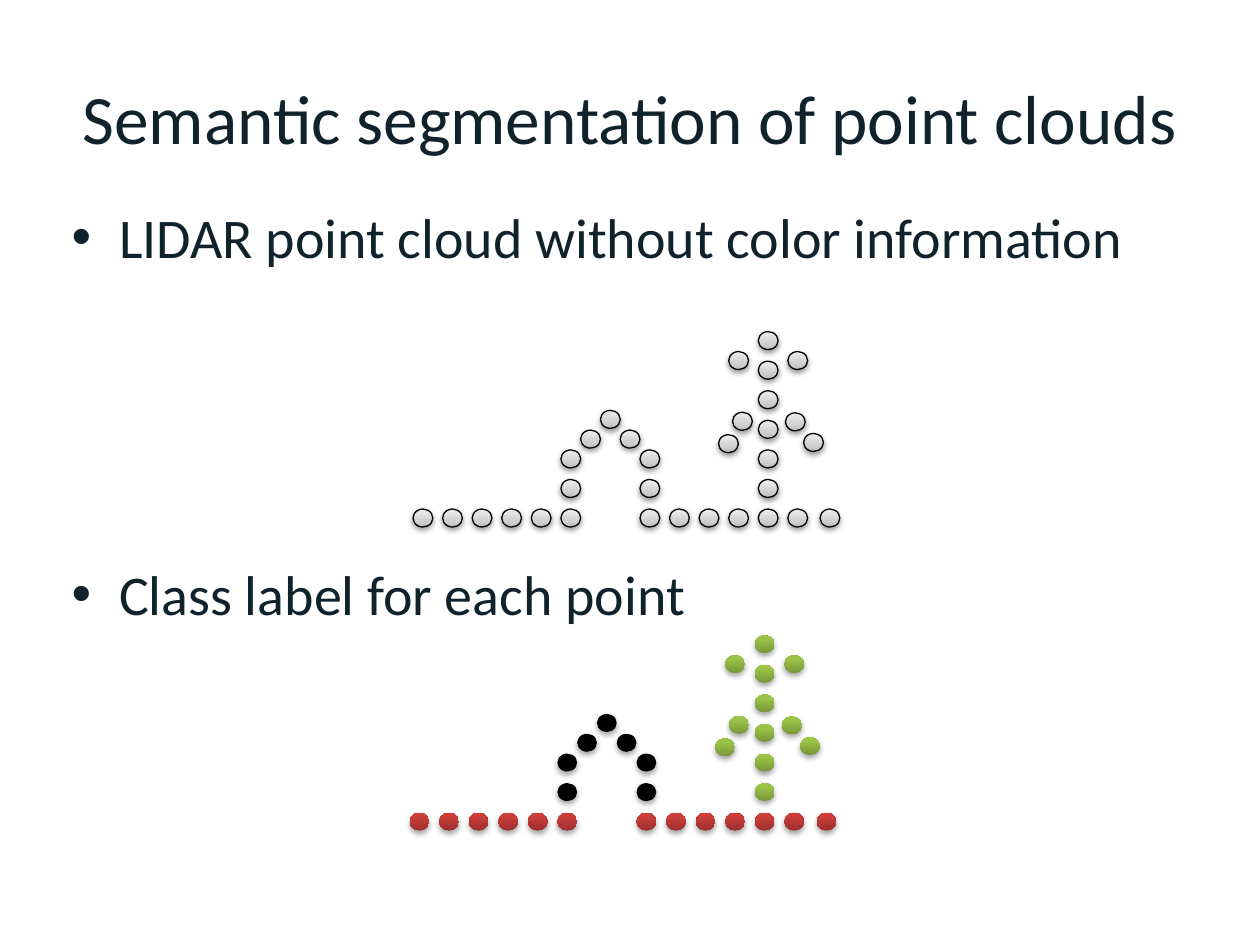
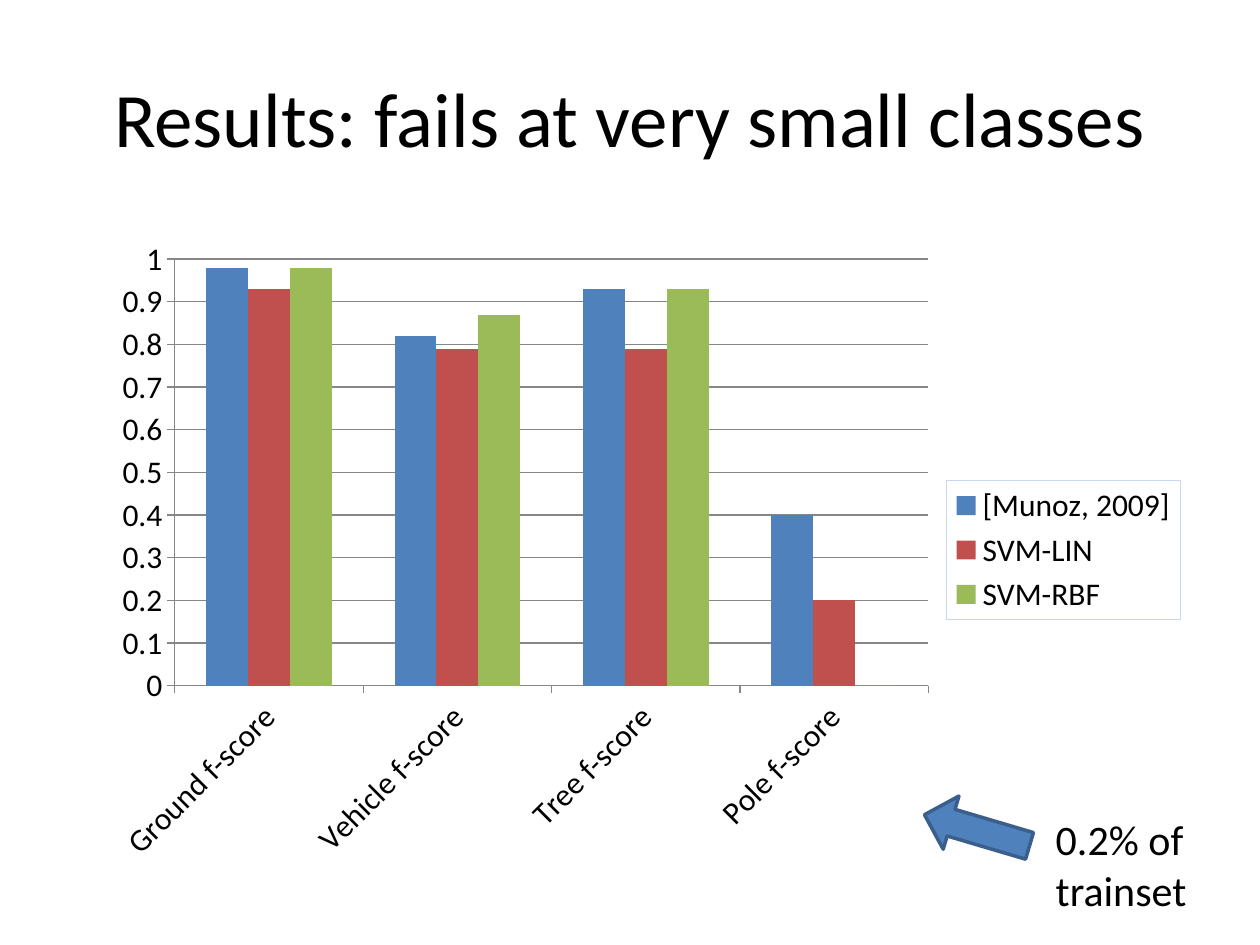
import pptx
import pptx.chart.data
import pptx.dml.color
import pptx.enum.chart
import pptx.enum.shapes
import pptx.enum.text
import pptx.oxml
import pptx.oxml.ns
import pptx.util
from pptx.util import Pt

FONT = "Calibri"
COLORS = {
    "ink": "10222B", "black": "000000", "axis": "878787", "legend_line": "C6D9F1",
    "blue": "4F81BD", "red": "C0504D", "green": "9BBB59", "arrow_line": "3A5F8C",
}
# Gradient stops (percent, colour) run from the bottom of a point to its top.
GRADIENTS = {
    "unlabelled": [(0, "BDBDBD"), (35, "D1D1D1"), (100, "EEEEEE")],
    "ground": [(0, "9C2F2D"), (80, "CB3E3A"), (100, "CE3B37")],
    "tree": [(0, "779737"), (80, "9BC348"), (100, "9DC746")],
}
POINT_WIDTH, POINT_HEIGHT = 11.3, 10.3
STEP = 16.9
ROOF_STEP = 11.3
RIGHT_WALL = 5 * STEP + 4 * ROOF_STEP
TRUNK = RIGHT_WALL + 4 * STEP

SCORES = {
    "[Munoz, 2009]": ("blue", (0.98, 0.82, 0.93, 0.4)),
    "SVM-LIN": ("red", (0.93, 0.79, 0.79, 0.2)),
    "SVM-RBF": ("green", (0.98, 0.87, 0.93, 0)),
}
CLASSES = ["Ground f-score", "Vehicle f-score", "Tree f-score", "Pole f-score"]


def rgb(name):
    return pptx.dml.color.RGBColor.from_string(COLORS[name])


def xml(tag, attributes="", content=""):
    """Build an element whose tag has the prefix a or c."""
    return pptx.oxml.parse_xml(
        f"<{tag} {pptx.oxml.ns.nsdecls('a', 'c')} {attributes}>{content}</{tag}>")


def color_xml(value, content=""):
    return f'<a:srgbClr val="{value}">{content}</a:srgbClr>'


def place(shape, left, top, width, height):
    shape.left, shape.top = Pt(left), Pt(top)
    shape.width, shape.height = Pt(width), Pt(height)


def add_span(para, text, size, color):
    span = para.add_run()
    span.text = text
    span.font.name, span.font.size = FONT, Pt(size)
    span.font.color.rgb = rgb(color)


def add_page(deck, layout, title, size, color):
    page = deck.slides.add_slide(deck.slide_layouts[layout])
    place(page.shapes.title, 36, 21.6, 648, 90)
    add_span(page.shapes.title.text_frame.paragraphs[0], title, size, color)
    return page


def fill_list(page, items, gap):
    """Write the bullets, with the given space before each one but the first."""
    body = page.placeholders[1]
    place(body, 33.8, 112.3, 648, 356.4)
    frame = body.text_frame
    frame.auto_size = pptx.enum.text.MSO_AUTO_SIZE.NONE
    for index, item in enumerate(items):
        para = frame.add_paragraph() if index else frame.paragraphs[0]
        if index:
            para.space_before = Pt(gap)
        add_span(para, item, 32, "ink")


def scene_points():
    """Return (x, height, class) of each point, from the leftmost ground point."""
    ground = [(i * STEP, 0) for i in range(6)]
    ground += [(RIGHT_WALL + i * STEP, 0) for i in range(6)]
    ground.append((232.6, 0))

    house = [(x, i * STEP) for x in (5 * STEP, RIGHT_WALL) for i in (1, 2)]
    house += [(5 * STEP + i * ROOF_STEP, 2 * STEP + (2 - abs(i - 2)) * ROOF_STEP)
              for i in (1, 2, 3)]

    tree = [(TRUNK, i * STEP) for i in range(1, 7)]
    branches = [(-STEP, 90), (STEP, 90), (-14.7, 55.3), (15.5, 55),
                (-22.7, 42.5), (25.9, 43.2)]
    tree += [(TRUNK + dx, height) for dx, height in branches]

    classes = {"ground": ground, "house": house, "tree": tree}
    return [(x, height, name) for name, spots in classes.items() for x, height in spots]


def set_gradient(shape, stops):
    shape.fill.gradient()
    shape.fill.gradient_angle = 90
    stop_list = shape.fill._xPr.find(".//" + pptx.oxml.ns.qn("a:gsLst"))
    for stop in list(stop_list):
        stop_list.remove(stop)
    for percent, value in stops:
        stop_list.append(xml("a:gs", f'pos="{percent * 1000}"', color_xml(value)))


def set_shadow(shape, distance, opacity):
    shape.shadow.inherit = False
    effects = shape._element.spPr.find(pptx.oxml.ns.qn("a:effectLst"))
    effects.append(xml(
        "a:outerShdw",
        f'blurRad="{Pt(3.1)}" dist="{Pt(distance)}" dir="5400000" rotWithShape="0"',
        color_xml(COLORS["black"], f'<a:alpha val="{opacity * 1000}"/>')))


def add_cloud(page, left, ground_top, labelled):
    cloud = page.shapes.add_group_shape()
    for x, height, name in scene_points():
        point = cloud.shapes.add_shape(
            pptx.enum.shapes.MSO_SHAPE.OVAL, Pt(left + x), Pt(ground_top - height),
            Pt(POINT_WIDTH), Pt(POINT_HEIGHT))
        if not labelled:
            set_gradient(point, GRADIENTS["unlabelled"])
        elif name in GRADIENTS:
            set_gradient(point, GRADIENTS[name])
        else:
            point.fill.solid()
            point.fill.fore_color.rgb = rgb("black")
        if labelled:
            point.line.fill.background()
            set_shadow(point, 1.8, 35)
        else:
            point.line.color.rgb = rgb("black")
            point.line.width = Pt(0.75)
            set_shadow(point, 1.6, 38)


def style_axis(axis):
    axis.major_tick_mark = pptx.enum.chart.XL_TICK_MARK.OUTSIDE
    axis.format.line.color.rgb = rgb("axis")
    axis.format.line.width = Pt(0.75)


def add_legend(chart):
    chart.has_legend = True
    chart.legend.position = pptx.enum.chart.XL_LEGEND_POSITION.RIGHT
    chart.legend.include_in_layout = False
    overlay = chart.legend._element.find(pptx.oxml.ns.qn("c:overlay"))
    overlay.addnext(xml("c:spPr", content=(
        f'<a:ln w="{Pt(0.75)}"><a:solidFill>{color_xml(COLORS["legend_line"])}'
        "</a:solidFill></a:ln>")))


def set_plot_area(chart, **fractions):
    """Fix the inner plot area as fractions x, y, w and h of the chart."""
    area = chart._chartSpace.chart.plotArea
    for old in area.findall(pptx.oxml.ns.qn("c:layout")):
        area.remove(old)
    parts = '<c:layoutTarget val="inner"/><c:xMode val="edge"/><c:yMode val="edge"/>'
    parts += "".join(f'<c:{key} val="{value}"/>' for key, value in fractions.items())
    area.insert(0, xml("c:layout", content=f"<c:manualLayout>{parts}</c:manualLayout>"))


def add_score_chart(page):
    data = pptx.chart.data.CategoryChartData()
    data.categories = CLASSES
    for method, (_, values) in SCORES.items():
        data.add_series(method, values)
    chart = page.shapes.add_chart(
        pptx.enum.chart.XL_CHART_TYPE.COLUMN_CLUSTERED,
        Pt(56.2), Pt(129.6), Pt(624.2), Pt(369.4), data).chart
    chart.has_title = False
    chart.font.name, chart.font.size = FONT, Pt(18)
    chart.font.color.rgb = rgb("black")

    plot = chart.plots[0]
    plot.vary_by_categories = False
    plot.gap_width, plot.overlap = 150, 0
    for series, (color, _) in zip(plot.series, SCORES.values()):
        series.format.fill.solid()
        series.format.fill.fore_color.rgb = rgb(color)

    scores = chart.value_axis
    scores.minimum_scale, scores.maximum_scale, scores.major_unit = 0, 1, 0.1
    scores.has_major_gridlines = True
    scores.major_gridlines.format.line.color.rgb = rgb("axis")
    scores.major_gridlines.format.line.width = Pt(0.75)
    style_axis(scores)

    style_axis(chart.category_axis)
    labels = chart.category_axis.tick_labels.font
    labels.name, labels.size = FONT, Pt(18)
    labels.color.rgb = rgb("black")
    text_body = chart.category_axis._element.find(pptx.oxml.ns.qn("c:txPr"))
    text_body.find(pptx.oxml.ns.qn("a:bodyPr")).set("rot", "-2700000")

    add_legend(chart)
    set_plot_area(chart, x=0.07, y=0.05, w=0.69, h=0.66)


def add_arrow(page):
    arrow = page.shapes.add_shape(
        pptx.enum.shapes.MSO_SHAPE.RIGHT_ARROW, Pt(527), Pt(458.6), Pt(62.6), Pt(31.7))
    arrow.rotation = 196.5
    arrow.shadow.inherit = False
    arrow.fill.solid()
    arrow.fill.fore_color.rgb = rgb("blue")
    arrow.line.color.rgb = rgb("arrow_line")
    arrow.line.width = Pt(2)


def add_note(page, lines):
    box = page.shapes.add_textbox(Pt(596.2), Pt(461.5), Pt(93.6), Pt(65.5))
    box.text_frame.word_wrap = False
    para = box.text_frame.paragraphs[0]
    for index, line in enumerate(lines):
        if index:
            para.add_line_break()
        add_span(para, line, 24, "black")


def main():
    deck = pptx.Presentation()
    deck.slide_width, deck.slide_height = Pt(720), Pt(540)

    page = add_page(deck, 1, "Semantic segmentation of point clouds", 39.6, "ink")
    fill_list(page, ["LIDAR point cloud without color information",
                     "Class label for each point"], 165.5)
    add_cloud(page, 234, 464.4, labelled=True)
    add_cloud(page, 236, 290.9, labelled=False)

    page = add_page(deck, 5, "Results: fails at very small classes", 44, "black")
    add_score_chart(page)
    add_arrow(page)
    add_note(page, ["0.2% of ", "trainset"])

    deck.save("out.pptx")


if __name__ == "__main__":
    main()
